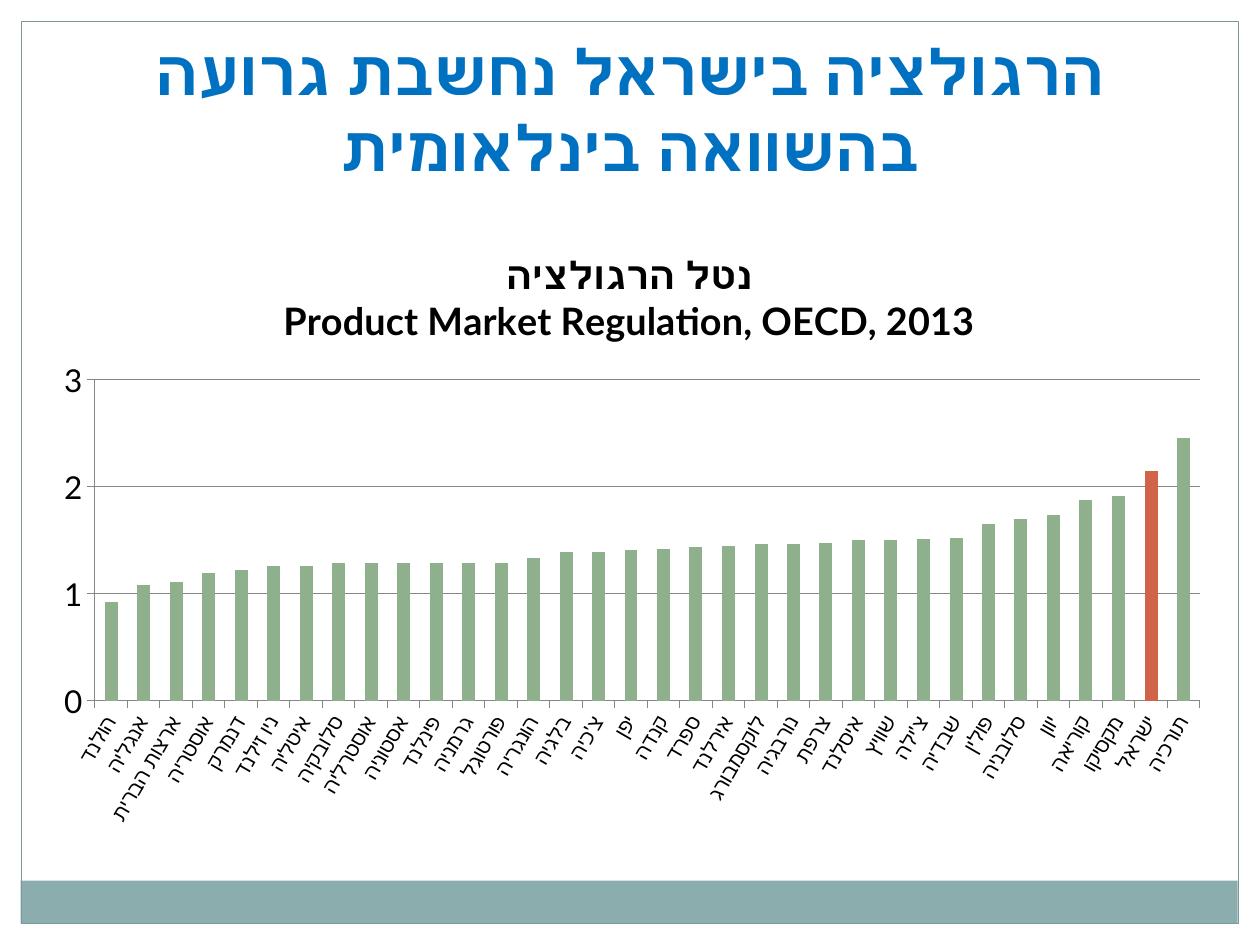
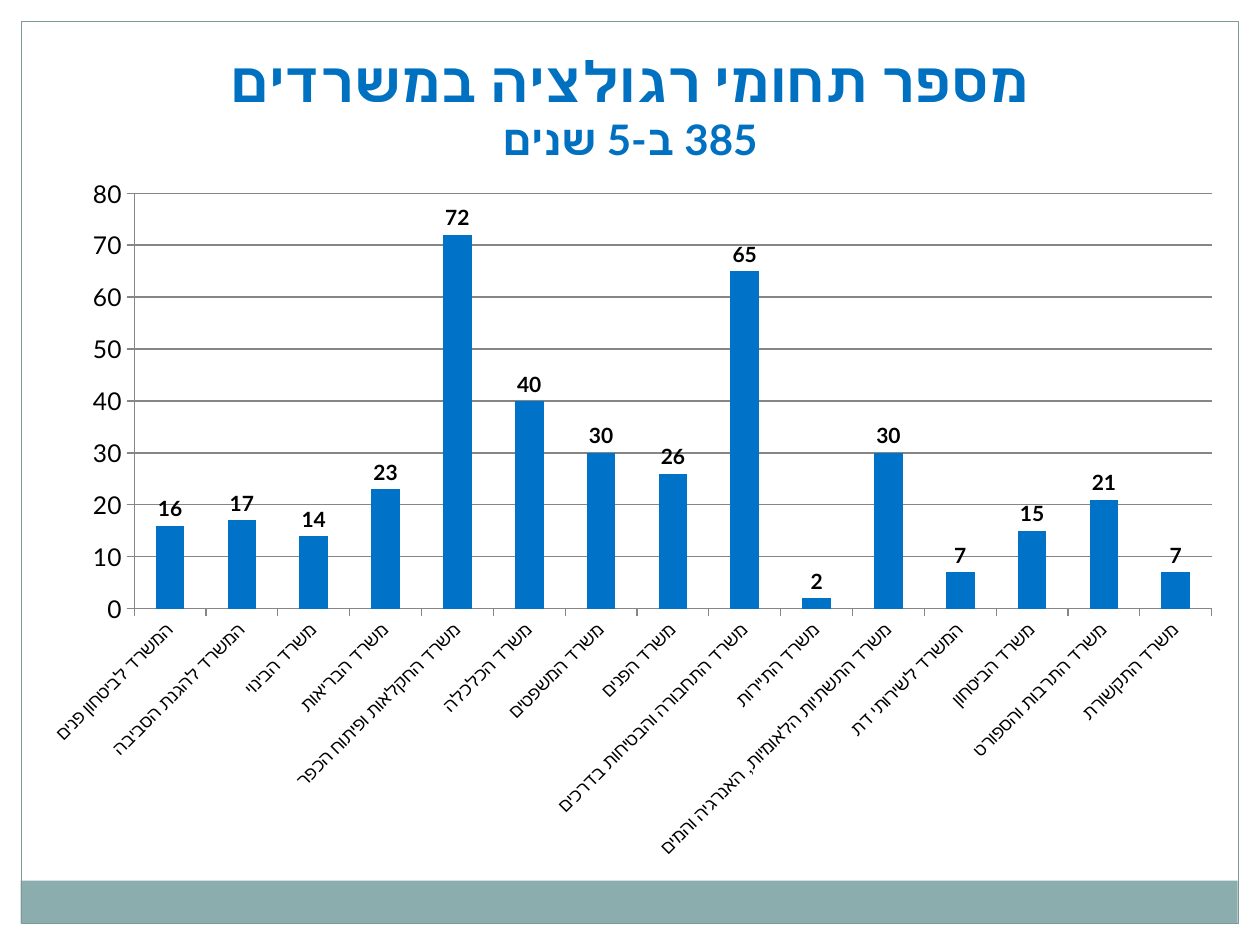
from lxml.etree import SubElement
from pptx import Presentation
from pptx.chart.data import CategoryChartData
from pptx.dml.color import RGBColor
from pptx.enum.chart import XL_CHART_TYPE, XL_LABEL_POSITION, XL_TICK_MARK
from pptx.enum.shapes import MSO_SHAPE
from pptx.enum.text import MSO_ANCHOR, PP_ALIGN
from pptx.oxml import parse_xml
from pptx.oxml.ns import nsdecls, qn
from pptx.util import Pt

FONT = "Lato"
WHITE = RGBColor(0xFF, 0xFF, 0xFF)
BLACK = RGBColor(0, 0, 0)
TEAL = RGBColor(0x8C, 0xAD, 0xAE)
EDGE = RGBColor(0x7C, 0x99, 0x9A)
GRID = RGBColor(0x86, 0x86, 0x86)
TITLE = RGBColor(0x00, 0x70, 0xC0)
GREEN = RGBColor(0x8F, 0xB0, 0x8C)
RED = RGBColor(0xD1, 0x63, 0x49)
BLUE = RGBColor(0x00, 0x72, 0xC8)

WIDE, HIGH, RIM = 720, 540, 12.24
FRAME = [
    ((0, 0, WIDE, RIM), WHITE, None),
    ((WIDE - RIM, 0, RIM, HIGH), WHITE, None),
    ((0, 0, RIM, HIGH), WHITE, None),
    ((11.8, 503.3, 695.5, 24.5), TEAL, None),
    ((RIM, RIM, WIDE - 2 * RIM, HIGH - 2 * RIM), None, EDGE),
]

COUNTRIES = [
    ("הולנד", 0.92), ("אנגליה", 1.08), ("ארצות הברית", 1.11),
    ("אוסטריה", 1.19), ("דנמרק", 1.22), ("ניו זילנד", 1.26),
    ("איטליה", 1.26), ("סלובקיה", 1.29), ("אוסטרליה", 1.29),
    ("אסטוניה", 1.29), ("פינלנד", 1.29), ("גרמניה", 1.29),
    ("פורטוגל", 1.29), ("הונגריה", 1.33), ("בלגיה", 1.39),
    ("צ'כיה", 1.39), ("יפן", 1.41), ("קנדה", 1.42),
    ("ספרד", 1.44), ("אירלנד", 1.45), ("לוקסמבורג", 1.46),
    ("נורבגיה", 1.46), ("צרפת", 1.47), ("איסלנד", 1.5),
    ("שוויץ", 1.5), ("צ'ילה", 1.51), ("שבדיה", 1.52),
    ("פולין", 1.65), ("סלובניה", 1.7), ("יוון", 1.74),
    ("קוריאה", 1.88), ("מקסיקו", 1.91), ("ישראל", 2.15),
    ("תורכיה", 2.46),
]
OFFICES = [
    ("המשרד לביטחון פנים", 16), ("המשרד להגנת הסביבה", 17),
    ("משרד הבינוי", 14), ("משרד הבריאות", 23),
    ("משרד החקלאות ופיתוח הכפר", 72), ("משרד הכלכלה", 40),
    ("משרד המשפטים", 30), ("משרד הפנים", 26),
    ("משרד התחבורה והבטיחות בדרכים", 65), ("משרד התיירות", 2),
    ("משרד התשתיות הלאומיות, האנרגיה והמים", 30),
    ("המשרד לשירותי דת", 7), ("משרד הביטחון", 15),
    ("משרד התרבות והספורט", 21), ("משרד התקשורת", 7),
]

SLIDES = [
    dict(
        top=15.1,
        lines=[("הרגולציה בישראל נחשבת גרועה בהשוואה בינלאומית", 36)],
        box=(20.2, 133.9, 679, 346.3), kind=XL_CHART_TYPE.COLUMN_STACKED,
        rows=COUNTRIES, color=GREEN, marks={"ישראל": RED},
        head=["נטל הרגולציה", "Product Market Regulation, OECD, 2013"],
        scale=(3, 1), sizes=(12, 18), turn=-60, overlap=100, label=None,
        inner=dict(x=0.05, y=0.24, w=0.93, h=0.53),
    ),
    dict(
        top=23,
        lines=[("מספר תחומי רגולציה במשרדים", 32), ("385 ב-5 שנים", 24)],
        box=(14.4, 94.3, 691.9, 402.5), kind=XL_CHART_TYPE.COLUMN_CLUSTERED,
        rows=OFFICES, color=BLUE, marks={}, head=[],
        scale=(80, 10), sizes=(10.5, 14), turn=-45, overlap=0, label=12,
        inner=dict(x=0.09, y=0.04, w=0.89, h=0.59),
    ),
]


def style(font, size, color=BLACK, bold=False):
    looks = dict(name=FONT, size=Pt(size), bold=bold)
    for key, value in looks.items():
        setattr(font, key, value)
    font.color.rgb = color


def paint(fill, color):
    if color is None:
        fill.background()
    else:
        fill.solid()
        fill.fore_color.rgb = color


def add_frame(slide):
    for box, color, edge in FRAME:
        shape = slide.shapes.add_shape(MSO_SHAPE.RECTANGLE, *map(Pt, box))
        shape.shadow.inherit = False
        paint(shape.fill, color)
        paint(shape.line.fill, edge)
        if edge is not None:
            shape.line.width = Pt(0.75)


def add_title(slide, top, lines):
    frame = slide.shapes.add_textbox(Pt(24), Pt(top), Pt(672), Pt(63)).text_frame
    frame.word_wrap = True
    frame.vertical_anchor = MSO_ANCHOR.TOP
    para = frame.paragraphs[0]
    para.alignment = PP_ALIGN.CENTER
    para._p.get_or_add_pPr().set("rtl", "1")
    for i, (text, size) in enumerate(lines):
        if i:
            para.add_line_break()
        run = para.add_run()
        run.text = text
        style(run.font, size, TITLE, True)
        SubElement(run._r.rPr, qn("a:cs"), typeface=FONT)


def add_head(chart, lines):
    chart.has_title = bool(lines)
    if not lines:
        return
    frame = chart.chart_title.text_frame
    for i, text in enumerate(lines):
        para = frame.add_paragraph() if i else frame.paragraphs[0]
        run = para.add_run()
        run.text = text
        style(run.font, 21.6, bold=True)
    chart.chart_title.include_in_layout = False


def set_inner(chart, inner):
    area = chart._chartSpace.chart.plotArea
    for old in area.findall(qn("c:layout")):
        area.remove(old)
    modes = dict(layoutTarget="inner", xMode="edge", yMode="edge")
    parts = "".join(f'<c:{k} val="{v}"/>' for k, v in {**modes, **inner}.items())
    area.insert(0, parse_xml(
        f'<c:layout {nsdecls("c")}><c:manualLayout>{parts}</c:manualLayout></c:layout>'))


def add_bars(slide, item):
    names, values = zip(*item["rows"])
    data = CategoryChartData()
    data.categories = names
    data.add_series("Series 1", values)
    chart = slide.shapes.add_chart(item["kind"], *map(Pt, item["box"]), data).chart
    chart.has_legend = False
    style(chart.font, item["sizes"][1])
    add_head(chart, item["head"])
    set_inner(chart, item["inner"])

    axes = (chart.category_axis, chart.value_axis)
    for axis, size in zip(axes, item["sizes"]):
        style(axis.tick_labels.font, size)
        axis.major_tick_mark = XL_TICK_MARK.OUTSIDE
        axis.minor_tick_mark = XL_TICK_MARK.NONE
        axis.format.line.color.rgb = GRID
        axis.format.line.width = Pt(0.75)
    body = axes[0]._element.txPr.find(qn("a:bodyPr"))
    body.set("rot", str(item["turn"] * 60000))
    axis = axes[1]
    axis.minimum_scale = 0
    axis.maximum_scale, axis.major_unit = item["scale"]
    axis.has_major_gridlines = True
    axis.major_gridlines.format.line.color.rgb = GRID
    axis.major_gridlines.format.line.width = Pt(0.75)

    plot = chart.plots[0]
    plot.gap_width = 150
    plot.overlap = item["overlap"]
    plot.vary_by_categories = False
    bars = plot.series[0]
    paint(bars.format.fill, item["color"])
    for name, color in item["marks"].items():
        paint(bars.points[names.index(name)].format.fill, color)
    if item["label"]:
        labels = bars.data_labels
        labels.show_value = True
        labels.position = XL_LABEL_POSITION.OUTSIDE_END
        style(labels.font, item["label"], bold=True)


def main():
    deck = Presentation()
    deck.slide_width, deck.slide_height = Pt(WIDE), Pt(HIGH)
    for item in SLIDES:
        slide = deck.slides.add_slide(deck.slide_layouts[6])
        add_frame(slide)
        add_title(slide, item["top"], item["lines"])
        add_bars(slide, item)
    deck.save("out.pptx")


if __name__ == "__main__":
    main()
